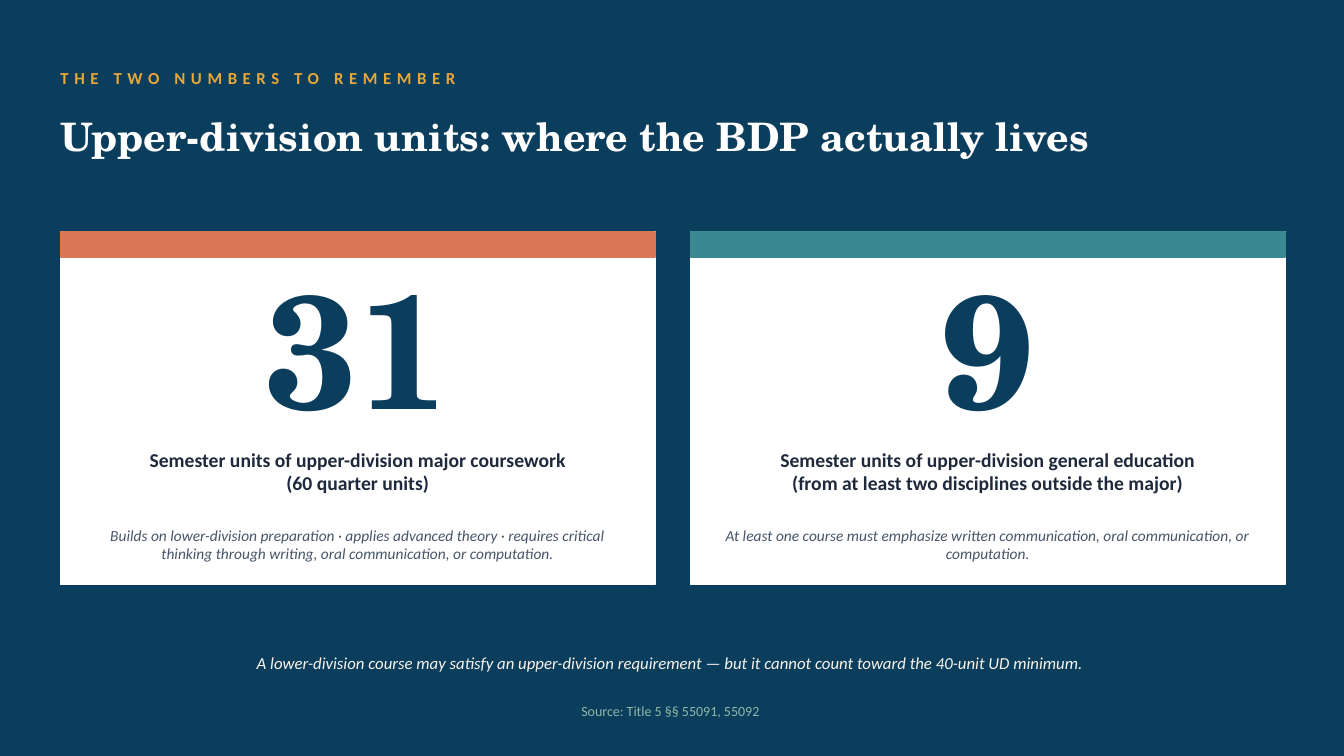
from pptx import Presentation
from pptx.dml.color import RGBColor
from pptx.enum.shapes import MSO_SHAPE as Preset
from pptx.enum.text import MSO_ANCHOR as Anchor, MSO_AUTO_SIZE as AutoSize, PP_ALIGN as Align
from pptx.util import Pt

SANS, SERIF = "Calibri", "TeX Gyre Schola"
NAVY, WHITE = "0B3D5C", "FFFFFF"

EYEBROW = "THE TWO NUMBERS TO REMEMBER"
TITLE = "Upper-division units: where the BDP actually lives"
CARDS = [
    {
        "colour": "D97757",
        "number": "31",
        "label": "Semester units of upper-division major coursework\n(60 quarter units)",
        "note": "Builds on lower-division preparation · applies advanced theory · requires critical "
                "thinking through writing, oral communication, or computation.",
    },
    {
        "colour": "3A8891",
        "number": "9",
        "label": "Semester units of upper-division general education\n"
                 "(from at least two disciplines outside the major)",
        "note": "At least one course must emphasize written communication, oral communication, "
                "or computation.",
    },
]
REMINDER = ("A lower-division course may satisfy an upper-division requirement — "
            "but it cannot count toward the 40-unit UD minimum.")
SOURCE = "Source: Title 5 §§ 55091, 55092"

LEFT, HEAD_WIDTH, FOOT_WIDTH = 43.2, 864, 871.2
CARD_TOP, CARD_WIDTH, CARD_HEIGHT, CARD_GAP = 165.6, 424.8, 252, 25.2
BAND_HEIGHT, PADDING = 18, 21.6


def colour(value):
    return RGBColor.from_string(value)


def write(box, text, size, ink, face=SANS, bold=False, italic=False, align=Align.CENTER):
    frame = box.text_frame
    frame.text = text
    frame.word_wrap = True
    frame.auto_size = AutoSize.NONE
    frame.vertical_anchor = Anchor.MIDDLE
    frame.margin_left = frame.margin_top = frame.margin_right = frame.margin_bottom = 0
    for para in frame.paragraphs:
        para.alignment = align
        for span in para.runs:
            span.font.name = face
            span.font.size = Pt(size)
            span.font.bold = bold
            span.font.italic = italic
            span.font.color.rgb = colour(ink)


def add_text(page, area, *content, **style):
    box = page.shapes.add_textbox(*map(Pt, area))
    write(box, *content, **style)
    return box


def add_block(page, area, fill):
    block = page.shapes.add_shape(Preset.RECTANGLE, *map(Pt, area))
    block.shadow.inherit = False
    block.fill.solid()
    block.fill.fore_color.rgb = colour(fill)
    block.line.color.rgb = colour(fill)
    block.line.width = Pt(1)


def add_card(page, left, card):
    inner, inner_width = left + PADDING, CARD_WIDTH - 2 * PADDING
    add_block(page, (left, CARD_TOP, CARD_WIDTH, CARD_HEIGHT), WHITE)
    add_block(page, (left, CARD_TOP, CARD_WIDTH, BAND_HEIGHT), card["colour"])
    add_text(page, (left, 190.8, CARD_WIDTH, 111.6), card["number"], 115, NAVY, face=SERIF, bold=True)
    add_text(page, (inner, 313.2, inner_width, 46.8), card["label"], 14, "1E293B", bold=True)
    add_text(page, (inner, 367.2, inner_width, 43.2), card["note"], 11, "475569", italic=True)


def main():
    deck = Presentation()
    deck.slide_width, deck.slide_height = Pt(960), Pt(540)
    page = deck.slides.add_slide(deck.slide_layouts[5])
    page.background.fill.solid()
    page.background.fill.fore_color.rgb = colour(NAVY)

    eyebrow = add_text(page, (LEFT, 43.2, HEAD_WIDTH, 25.2), EYEBROW, 12, "E8A838",
                       bold=True, align=Align.LEFT)
    for span in eyebrow.text_frame.paragraphs[0].runs:
        span._r.get_or_add_rPr().set("spc", "400")

    title = page.shapes.title
    title.left, title.top, title.width, title.height = map(Pt, (LEFT, 72, HEAD_WIDTH, 50.4))
    write(title, TITLE, 28, WHITE, face=SERIF, bold=True, align=Align.LEFT)

    for index, card in enumerate(CARDS):
        add_card(page, LEFT + index * (CARD_WIDTH + CARD_GAP), card)

    add_text(page, (LEFT, 457.2, FOOT_WIDTH, 32.4), REMINDER, 12, "F8F4ED", italic=True)
    add_text(page, (LEFT, 496.8, FOOT_WIDTH, 21.6), SOURCE, 10, "8FB8A8")
    deck.save("out.pptx")


if __name__ == "__main__":
    main()
